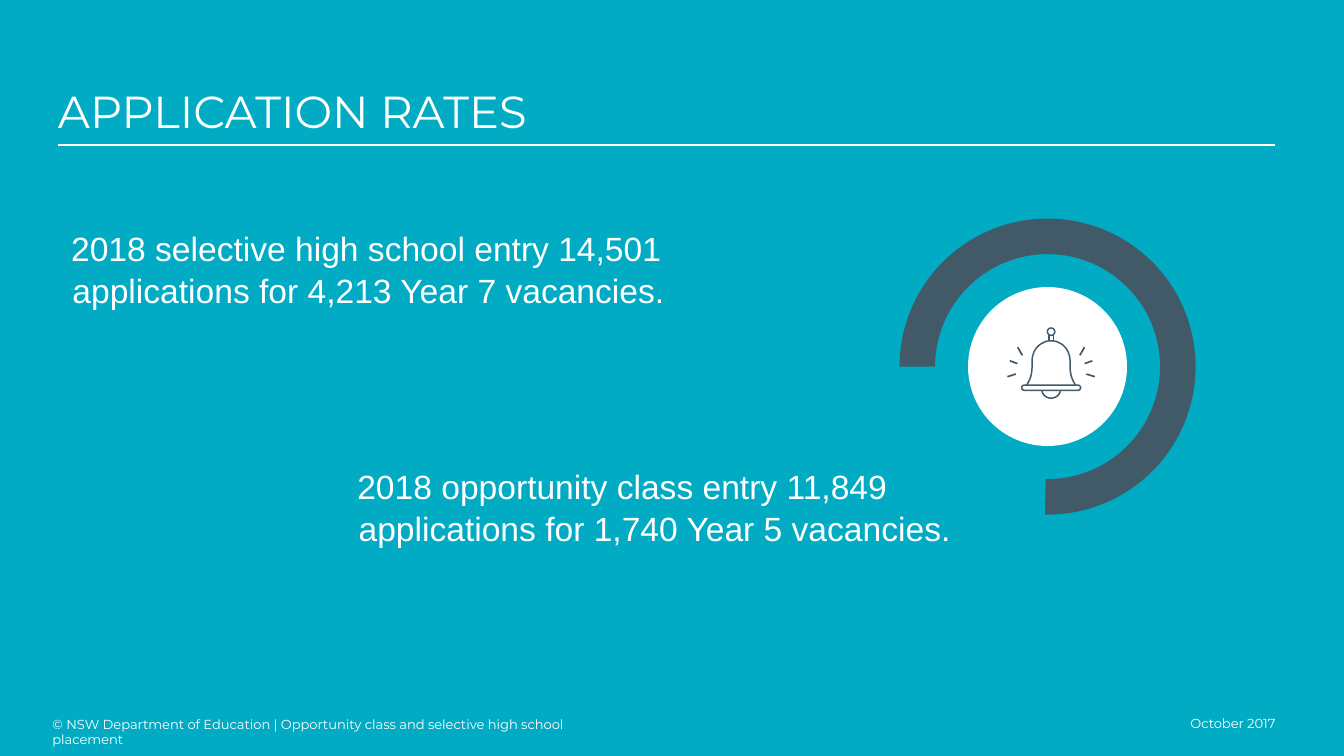
from lxml import etree
from pptx import Presentation
from pptx.dml.color import RGBColor
from pptx.enum.shapes import MSO_CONNECTOR, MSO_SHAPE
from pptx.enum.text import MSO_ANCHOR, MSO_AUTO_SIZE, PP_ALIGN
from pptx.oxml.ns import qn
from pptx.util import Pt

LEFT, RIGHT = PP_ALIGN.LEFT, PP_ALIGN.RIGHT
TOP, BOTTOM = MSO_ANCHOR.TOP, MSO_ANCHOR.BOTTOM
GROW, FIXED = MSO_AUTO_SIZE.SHAPE_TO_FIT_TEXT, MSO_AUTO_SIZE.NONE
STRAIGHT = MSO_CONNECTOR.STRAIGHT
OVAL, PILL, ARC = MSO_SHAPE.OVAL, MSO_SHAPE.ROUNDED_RECTANGLE, MSO_SHAPE.BLOCK_ARC

COLORS = {"back": "00ABC3", "dark": "425968", "light": "FFFFFF"}
HEAD, BODY = "Montserrat", "Arial"

TITLE = "APPLICATION RATES"
FACTS = [
    ("2018 selective high school entry 14,501 applications for 4,213 Year 7 vacancies.", 31, 117.4),
    ("2018 opportunity class entry 11,849 applications for 1,740 Year 5 vacancies.", 184.3, 244.8),
]
FOOTERS = [
    ("© NSW Department of Education | Opportunity class and selective high school placement",
     (28.1, 382.3, 306, 21.6), LEFT, (0, 3.6, 7.2, 3.6)),
    ("October 2017", (553, 373.7, 130.3, 21.6), RIGHT, (7.2, 3.6, 0, 3.6)),
]

RING_X, RING_Y = 561.2, 196.4
BELL_X = 563.1
DOME = [
    ((0, 182.6), (1.6, 182.6), (3, 182.8), (4.2, 183.6)),
    ((4.2, 183.6), (8, 185.2), (10.2, 189.2), (10.2, 193.7)),
    ((10.2, 193.7), (10, 200), (10.8, 202.6), (13, 206.2)),
]
TONGUE = [((0, 213.3), (2.5, 213.3), (4.6, 211.6), (5, 209.2))]
STROKES = [
    ((1.2, 179.6), (1.2, 182.6)),
    ((15.4, 190.4), (17.9, 186)),
    ((18, 194.8), (22.1, 193.3)),
    ((18.9, 200.4), (23.4, 201.8)),
]

deck = Presentation()
deck.slide_width, deck.slide_height = Pt(720), Pt(405)
slide = deck.slides.add_slide(deck.slide_layouts[5])
shapes = slide.shapes


def tint(name):
    return RGBColor.from_string(COLORS[name])


def place(shape, box):
    shape.left, shape.top, shape.width, shape.height = map(Pt, box)


def write(shape, text, font, size, align=LEFT, anchor=TOP, pads=(7.2, 3.6, 7.2, 3.6), fit=FIXED):
    frame = shape.text_frame
    frame.word_wrap, frame.auto_size, frame.vertical_anchor = True, fit, anchor
    (frame.margin_left, frame.margin_top,
     frame.margin_right, frame.margin_bottom) = map(Pt, pads)
    para = frame.paragraphs[0]
    para.alignment = align
    run = para.add_run()
    run.text = text
    run.font.name, run.font.size = font, Pt(size)
    run.font.color.rgb = tint("light")
    return para


def style(shape, fill=None, line=None, width=1):
    shape.shadow.inherit = False
    if fill:
        shape.fill.solid()
        shape.fill.fore_color.rgb = tint(fill)
    else:
        shape.fill.background()
    if line:
        shape.line.color.rgb = tint(line)
        shape.line.width = Pt(width)
    else:
        shape.line.fill.background()


def disc(kind, x, y, wide, high, **look):
    shape = shapes.add_shape(kind, *map(Pt, (x - wide / 2, y - high / 2, wide, high)))
    style(shape, **look)
    return shape


def rule(start, end, color, width):
    line = shapes.add_connector(STRAIGHT, *map(Pt, (*start, *end)))
    line.line.color.rgb = tint(color)
    line.line.width = Pt(width)
    etree.SubElement(line._element.spPr, qn("a:effectLst"))


def bend(curve, steps=10):
    for i in range(steps + 1):
        t = i / steps
        parts = ((1 - t) ** 3, 3 * t * (1 - t) ** 2, 3 * t * t * (1 - t), t ** 3)
        yield tuple(sum(w * p[axis] for w, p in zip(parts, curve)) for axis in (0, 1))


def mirror(curves):
    half = [point for curve in curves for point in bend(curve)]
    both = [(-x, y) for x, y in reversed(half)] + half
    points = [(Pt(BELL_X + x), Pt(y)) for x, y in both]
    pen = shapes.build_freeform(*points[0])
    pen.add_line_segments(points[1:], close=False)
    style(pen.convert_to_shape(), line="dark", width=0.8)


slide.background.fill.solid()
slide.background.fill.fore_color.rgb = tint("back")

place(shapes.title, (31, 20.9, 652.3, 56.2))
write(shapes.title, TITLE, HEAD, 24, anchor=BOTTOM, pads=(0, 3.6, 7.2, 3.6))
rule((31, 77.8), (683.3, 77.8), "light", 1)

for text, box, align, pads in FOOTERS:
    write(shapes.add_textbox(*map(Pt, box)), text, HEAD, 7, align, BOTTOM, pads)

for text, x, y in FACTS:
    note = shapes.add_textbox(*map(Pt, (x, y, 339.8, 51.1)))
    para = write(note, text, BODY, 18, fit=GROW)
    para.line_spacing = 1.05
    props = para._p.get_or_add_pPr()
    props.set("marL", str(Pt(0.7)))
    props.set("indent", str(-Pt(0.7)))

ring = disc(ARC, RING_X, RING_Y, 158.6, 158.6, fill="dark")
for i, value in enumerate((108, 54.59, 0.12)):
    ring.adjustments[i] = value
disc(OVAL, RING_X, RING_Y, 84.2, 84.2, fill="light", line="light")

mirror(DOME)
mirror(TONGUE)
base = disc(PILL, BELL_X, 207.7, 31.6, 2.8, line="dark", width=0.8)
base.adjustments[0] = 0.5
disc(OVAL, BELL_X, 177.7, 4, 4, line="dark", width=0.8)
for start, end in STROKES:
    for side in (-1, 1):
        rule(*[(BELL_X + side * x, y) for x, y in (start, end)], "dark", 0.9)

deck.save("out.pptx")
